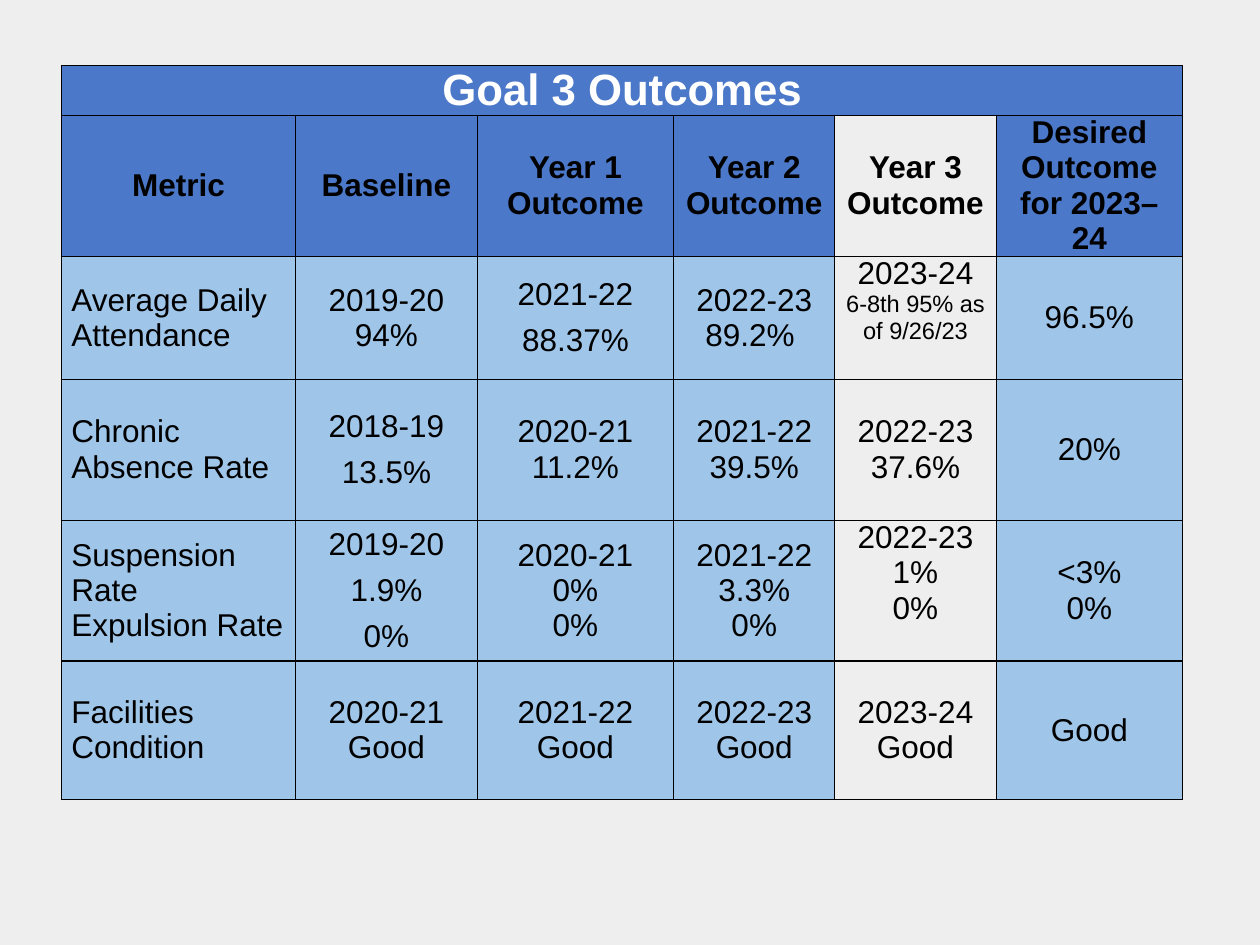
import pptx
import pptx.util
import pptx.dml.color
import pptx.enum.text
import pptx.oxml

Cm = pptx.util.Cm
Pt = pptx.util.Pt
Align = pptx.enum.text.PP_ALIGN
Anchor = pptx.enum.text.MSO_ANCHOR

BLUE, LIGHT, GREY = "4B78C8", "9FC5E8", "EEEEEE"
WIDTHS = [4.72, 3.66, 3.96, 3.25, 3.25, 3.76]
HEIGHTS = [1, 2.84, 2.48, 2.84, 2.84, 2.79]
YEAR3 = 4
SPACED = {(2, 2), (3, 1), (4, 1)}
TOPS = {(2, YEAR3), (4, YEAR3)}
SMALL = "6-8th 95% as of 9/26/23"
ROWS = [
    ["Goal 3 Outcomes"],
    ["Metric", "Baseline", "Year 1 Outcome", "Year 2 Outcome",
     "Year 3 Outcome", "Desired Outcome for 2023–24"],
    ["Average Daily Attendance", "2019-20\n94%", "2021-22\n88.37%",
     "2022-23\n89.2% ", "2023-24\n" + SMALL, "96.5%"],
    ["Chronic Absence Rate", "2018-19\n13.5%", "2020-21\n11.2%",
     "2021-22\n39.5%", "2022-23\n37.6%", "20%"],
    ["Suspension Rate\nExpulsion Rate", "2019-20\n1.9%\n0%",
     "2020-21\n0%\n0%", "2021-22\n3.3%\n0%", "2022-23\n1%\n0%", "<3%\n0%"],
    ["Facilities Condition", "2020-21\nGood", "2021-22\nGood",
     "2022-23\nGood", "2023-24\nGood", "Good"],
]


def color(code):
    return pptx.dml.color.RGBColor.from_string(code)


def assign(item, values):
    for name, value in values.items():
        setattr(item, name, value)


class Deck:
    font = "Arial"
    inset = {"margin_left": Cm(0.2), "margin_right": Cm(0.2),
             "margin_top": 0, "margin_bottom": 0}
    plain = {"first_row": False, "horz_banding": False}

    def __init__(self, wide, high):
        self.file = pptx.Presentation()
        assign(self.file, {"slide_width": Cm(wide), "slide_height": Cm(high)})

    def page(self, fill):
        self.slide = self.file.slides.add_slide(self.file.slide_layouts[6])
        back = self.slide.background.fill
        back.solid()
        back.fore_color.rgb = color(fill)

    def table(self, left, top, widths, heights):
        frame = self.slide.shapes.add_table(
            len(heights), len(widths), Cm(left), Cm(top),
            Cm(sum(widths)), Cm(sum(heights)))
        grid = frame.table
        assign(grid, self.plain)
        for col, wide in zip(grid.columns, widths):
            col.width = Cm(wide)
        for row, high in zip(grid.rows, heights):
            row.height = Cm(high)
        return grid

    def border(self, cell, code="000000", width=0.75):
        props = cell._tc.get_or_add_tcPr()
        for side in "LRTB":
            line = pptx.oxml.parse_xml(
                f'<a:ln{side} xmlns:a="http://schemas.openxmlformats.org/'
                f'drawingml/2006/main" w="{Pt(width)}"><a:solidFill>'
                f'<a:srgbClr val="{code}"/></a:solidFill></a:ln{side}>')
            props.append(line)

    def paint(self, cell, fill):
        self.border(cell)
        cell.fill.solid()
        cell.fill.fore_color.rgb = color(fill)

    def label(self, cell, text, align, anchor, size, ink, bold, gap):
        assign(cell, {**self.inset, "vertical_anchor": anchor})
        cell.text = text
        for i, para in enumerate(cell.text_frame.paragraphs):
            assign(para, {"alignment": align, "space_before": Pt(gap if i else 0)})
            for run in para.runs:
                points = 13.5 if run.text == SMALL else size
                assign(run.font, {"name": self.font, "size": Pt(points), "bold": bold})
                run.font.color.rgb = color(ink)


def main():
    deck = Deck(25.4, 19.05)
    deck.page(GREY)
    grid = deck.table(1.24, 1.32, WIDTHS, HEIGHTS)
    grid.cell(0, 0).merge(grid.cell(0, len(WIDTHS) - 1))
    for r in range(len(HEIGHTS)):
        for c in range(len(WIDTHS)):
            fill = BLUE if r < 2 else LIGHT
            deck.paint(grid.cell(r, c), GREY if r and c == YEAR3 else fill)
    for r, row in enumerate(ROWS):
        for c, text in enumerate(row):
            deck.label(
                grid.cell(r, c), text,
                align=Align.LEFT if r > 1 and c == 0 else Align.CENTER,
                anchor=Anchor.TOP if (r, c) in TOPS else Anchor.MIDDLE,
                size=18 if r else 25,
                ink="000000" if r else "FFFFFF",
                bold=r < 2,
                gap=6 if (r, c) in SPACED else 0)
    deck.file.save("out.pptx")


if __name__ == "__main__":
    main()
